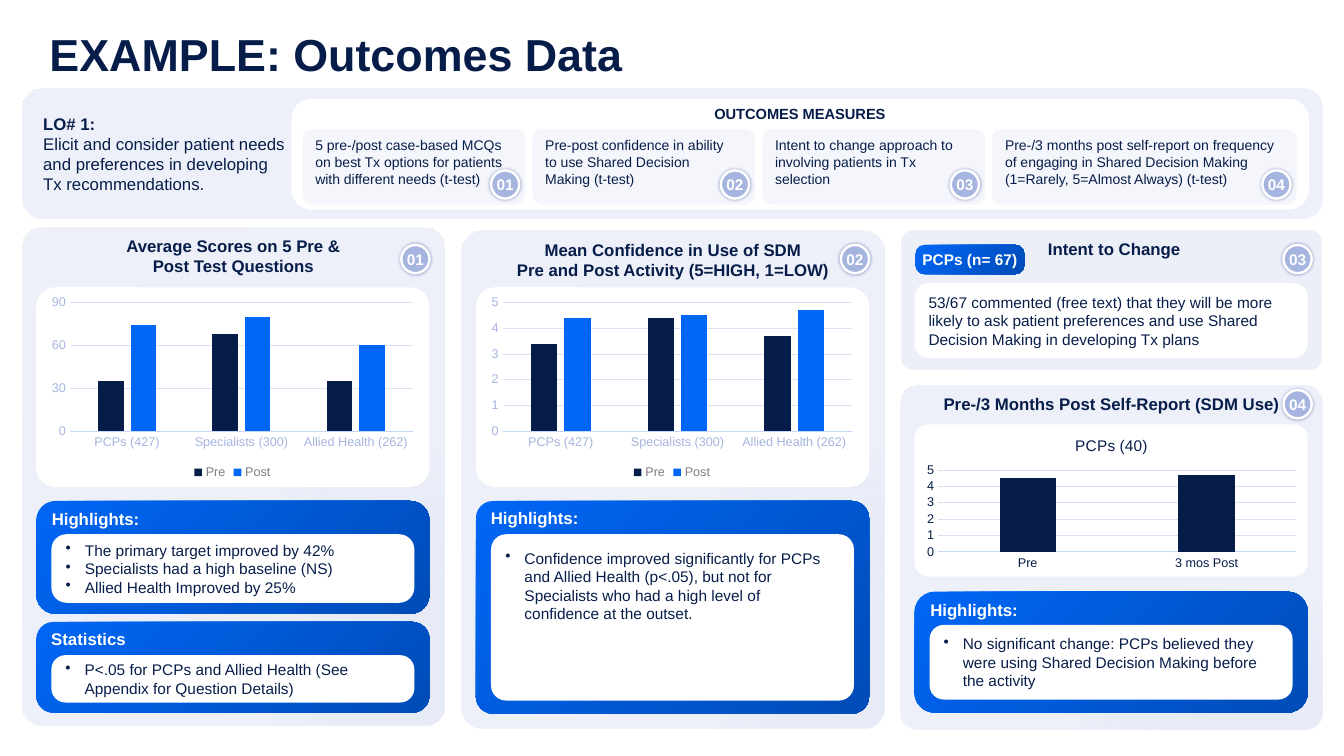
from dataclasses import dataclass

from lxml import etree
from pptx import Presentation
from pptx import util as u
from pptx.chart import data as cd
from pptx.dml import color
from pptx.enum import chart as ch
from pptx.enum import shapes, text
from pptx.oxml import ns, parse_xml


@dataclass(frozen=True)
class Theme:
    font: str = "Arial"
    navy: str = "071D49"
    blue: str = "0066F5"
    deep_blue: str = "004CB8"
    white: str = "FFFFFF"
    mist: str = "EDF0F9"
    grid: str = "DBE1F3"
    axis: str = "C4D6F9"
    lilac: str = "A6B5E0"
    grey: str = "808080"
    shadow: str = "00147B"
    title: float = 32
    heading: float = 12
    body: float = 11
    label: float = 10.5
    small: float = 10
    tick: float = 9


@dataclass(frozen=True)
class Measure:
    x: float
    w: float
    right: float
    words: str


@dataclass(frozen=True)
class Callout:
    x: float
    y: float
    h: float
    r: float
    inner_h: float
    inner_r: float
    heading: str
    points: tuple[str, ...]
    top: bool = False


@dataclass(frozen=True)
class Bars:
    box: tuple[float, float, float, float]
    cats: tuple[str, ...]
    series: tuple[tuple[str, tuple[float, ...]], ...]
    top: float
    step: float
    ink: str
    title: str = ""


T = Theme()
COLS = (0.22, 4.58, 8.93)
INNER = tuple(round(x + 0.14, 2) for x in COLS)
GROUPS = ("PCPs (427)", "Specialists (300)", "Allied Health (262)")
MEASURES = (
    Measure(3, 2.21, 0.2, "5 pre-/post case-based MCQs on best Tx options for patients with different needs (t-test)"),
    Measure(5.28, 2.21, 0.2, "Pre-post confidence in ability to use Shared Decision Making (t-test)"),
    Measure(7.56, 2.21, 0.2, "Intent to change approach to involving patients in Tx selection"),
    Measure(9.84, 3.02, 0.1, "Pre-/3 months post self-report on frequency of engaging in Shared Decision Making "
            "(1=Rarely, 5=Almost Always) (t-test)"),
)
CALLOUTS = (
    Callout(INNER[0], 4.97, 1.12, 0.19, 0.68, 0.15, "Highlights:",
            ("The primary target improved by 42%", "Specialists had a high baseline (NS)",
             "Allied Health Improved by 25%")),
    Callout(INNER[0], 6.17, 0.9, 0.17, 0.47, 0.14, "Statistics",
            ("P<.05 for PCPs and Allied Health (See Appendix for Question Details)",)),
    Callout(INNER[1], 4.97, 2.11, 0.17, 1.65, 0.15, "Highlights:",
            ("Confidence improved significantly for PCPs and Allied Health (p<.05), but not for "
             "Specialists who had a high level of confidence at the outset.",), True),
    Callout(INNER[2], 5.87, 1.2, 0.2, 0.74, 0.14, "Highlights:",
            ("No significant change: PCPs believed they were using Shared Decision Making before the activity",)),
)
CHARTS = (
    Bars((0.44, 2.89, 3.73, 1.91), GROUPS, (("Pre", (35, 68, 35)), ("Post", (74, 80, 60))), 90, 30, T.lilac),
    Bars((4.8, 2.89, 3.73, 1.91), GROUPS, (("Pre", (3.4, 4.4, 3.7)), ("Post", (4.4, 4.5, 4.7))), 5, 1, T.lilac),
    Bars((9.12, 4.21, 3.81, 1.48), ("Pre", "3 mos Post"), (("PCPs (40)", (4.5, 4.7)),), 5, 1, T.navy, "PCPs (40)"),
)


def rgb(c: str) -> color.RGBColor:
    return color.RGBColor.from_string(c)


def put_text(sp, *lines: str, size: float = T.heading, c: str = T.navy, bold: bool = False,
             first_only: bool = False, center: bool = False, middle: bool = False, bullet: bool = False,
             ins: tuple[float, ...] = (0, 0, 0, 0), spacing: float | None = None) -> None:
    tf = sp.text_frame
    tf.word_wrap = True
    tf.vertical_anchor = text.MSO_ANCHOR.MIDDLE if middle else text.MSO_ANCHOR.TOP
    tf.margin_left, tf.margin_top, tf.margin_right, tf.margin_bottom = map(u.Inches, ins)
    for i, line in enumerate(lines):
        p = tf.add_paragraph() if i else tf.paragraphs[0]
        p.alignment = text.PP_ALIGN.CENTER if center else text.PP_ALIGN.LEFT
        if spacing:
            p.line_spacing = spacing
        if bullet:
            pPr = p._p.get_or_add_pPr()
            pPr.set("marL", str(u.Inches(0.19)))
            pPr.set("indent", str(u.Inches(-0.19)))
            etree.SubElement(pPr, ns.qn("a:buChar")).set("char", "•")
        r = p.add_run()
        r.text = line
        r.font.name, r.font.size = T.font, u.Pt(size)
        r.font.bold = bold and not (first_only and i)
        r.font.color.rgb = rgb(c)


def set_gradient(sp, stops: tuple[tuple[int, str, int], ...], direction: str) -> None:
    gs = "".join(f'<a:gs pos="{pos * 1000}"><a:srgbClr val="{c}"><a:alpha val="{a * 1000}"/></a:srgbClr></a:gs>'
                 for pos, c, a in stops)
    sp._element.spPr.insert(2, parse_xml(
        f'<a:gradFill {ns.nsdecls("a")} rotWithShape="1"><a:gsLst>{gs}</a:gsLst>{direction}</a:gradFill>'))


def add_box(s, x: float, y: float, w: float, h: float, r: float, fill: str = T.white, alpha: int = 100):
    sp = s.shapes.add_shape(shapes.MSO_SHAPE.ROUNDED_RECTANGLE, *map(u.Inches, (x, y, w, h)))
    sp.adjustments[0] = r / min(w, h)
    sp.shadow.inherit = False
    sp.line.fill.background()
    if fill == "panel":
        set_gradient(sp, ((24, T.grid, 65), (100, T.mist, 100)),
                     '<a:path path="rect"><a:fillToRect l="100000" t="100000"/></a:path>')
    elif fill == "accent":
        set_gradient(sp, ((0, T.blue, 100), (100, T.deep_blue, 100)), '<a:lin ang="2700000" scaled="0"/>')
    else:
        sp.fill.solid()
        sp.fill.fore_color.rgb = rgb(fill)
        if alpha < 100:
            clr = sp._element.spPr.find(".//" + ns.qn("a:srgbClr"))
            etree.SubElement(clr, ns.qn("a:alpha")).set("val", str(alpha * 1000))
    return sp


def add_badge(s, x: float, y: float, number: int) -> None:
    sp = s.shapes.add_shape(shapes.MSO_SHAPE.OVAL, *map(u.Inches, (x, y, 0.28, 0.28)))
    sp.fill.solid()
    sp.fill.fore_color.rgb = rgb(T.lilac)
    sp.line.color.rgb, sp.line.width = rgb(T.white), u.Pt(1.75)
    sp.shadow.inherit = False
    sp._element.spPr.find(ns.qn("a:effectLst")).append(parse_xml(
        f'<a:outerShdw {ns.nsdecls("a")} blurRad="{u.Pt(2)}" dist="0" dir="0" algn="ctr">'
        f'<a:srgbClr val="{T.shadow}"><a:alpha val="34000"/></a:srgbClr></a:outerShdw>'))
    put_text(sp, f"{number:02d}", size=T.body, c=T.white, bold=True, center=True, middle=True)


def add_callout(s, k: Callout) -> None:
    put_text(add_box(s, k.x, k.y, 3.9, k.h, k.r, "accent"), k.heading,
             c=T.white, bold=True, ins=(0.1, 0.02, 0.1, 0.1))
    put_text(add_box(s, k.x + 0.15, k.y + 0.33, 3.6, k.inner_h, k.inner_r), *k.points, size=T.body,
             bullet=True, middle=not k.top, ins=(0.1, 0.1 if k.top else 0, 0.1, 0))


def set_font(font, size: float, c: str) -> None:
    font.name, font.size, font.bold = T.font, u.Pt(size), False
    font.color.rgb = rgb(c)


def add_bars(s, b: Bars) -> None:
    data = cd.CategoryChartData()
    data.categories = b.cats
    for name, values in b.series:
        data.add_series(name, values)
    chart = s.shapes.add_chart(ch.XL_CHART_TYPE.COLUMN_CLUSTERED, *map(u.Inches, b.box), data).chart
    set_font(chart.font, T.small, T.navy)
    chart.has_title = bool(b.title)
    if b.title:
        chart.chart_title.text_frame.text = b.title
        set_font(chart.chart_title.text_frame.paragraphs[0].runs[0].font, T.body, T.navy)
    chart.has_legend = not b.title
    if chart.has_legend:
        chart.legend.position = ch.XL_LEGEND_POSITION.BOTTOM
        chart.legend.include_in_layout = False
        set_font(chart.legend.font, T.tick, T.grey)
    cat, val = chart.category_axis, chart.value_axis
    for axis in (cat, val):
        axis.major_tick_mark = axis.minor_tick_mark = ch.XL_TICK_MARK.NONE
        set_font(axis.tick_labels.font, T.tick, b.ink)
    val.minimum_scale, val.maximum_scale, val.major_unit = 0, b.top, b.step
    val.format.line.fill.background()
    for line, c in ((cat.format.line, T.axis), (val.major_gridlines.format.line, T.grid)):
        line.color.rgb, line.width = rgb(c), u.Pt(0.75)
    plot = chart.plots[0]
    plot.gap_width, plot.overlap, plot.vary_by_categories = 219, -27, False
    for series, c in zip(plot.series, (T.navy, T.blue)):
        series.format.fill.solid()
        series.format.fill.fore_color.rgb = rgb(c)


def main() -> None:
    prs = Presentation()
    prs.slide_width, prs.slide_height = u.Inches(13.33), u.Inches(7.5)
    s = prs.slides.add_slide(prs.slide_layouts[6])

    title = s.shapes.add_textbox(*map(u.Inches, (0.49, 0.35, 12.49, 0.66)))
    put_text(title, "EXAMPLE: Outcomes Data", size=T.title, bold=True, spacing=0.85)

    put_text(add_box(s, COLS[0], 0.88, 12.9, 1.29, 0.2, "panel"), "LO# 1:",
             "Elicit and consider patient needs and preferences in developing Tx recommendations.",
             bold=True, first_only=True, middle=True, ins=(0.15, 0.1, 10.2, 0.1))
    put_text(add_box(s, 2.89, 0.98, 10.09, 1.1, 0.2), "OUTCOMES MEASURES",
             size=T.label, bold=True, center=True)
    for i, m in enumerate(MEASURES, 1):
        put_text(add_box(s, m.x, 1.28, m.w, 0.75, 0.1, T.mist, 60), m.words,
                 size=T.small, ins=(0.1, 0.05, m.right, 0))
        add_badge(s, m.x + m.w - 0.34, 1.69, i)

    panels = (
        (COLS[0], 2.26, 4.94, 0.2, ("Average Scores on 5 Pre &", "Post Test Questions")),
        (COLS[1], 2.29, 4.94, 0.22, ("Mean Confidence in Use of SDM", "Pre and Post Activity (5=HIGH, 1=LOW)")),
        (COLS[2], 3.83, 3.41, 0.18, ("Pre-/3 Months Post Self-Report (SDM Use)",)),
    )
    for x, y, h, r, lines in panels:
        put_text(add_box(s, x, y, 4.19, h, r, "panel"), *lines, bold=True, center=True, ins=(0.1, 0.02, 0.1, 0))
    for x, y, h, r in ((INNER[0], 2.85, 1.98, 0.19), (INNER[1], 2.85, 1.98, 0.19), (INNER[2], 4.21, 1.51, 0.14)):
        add_box(s, x, y, 3.9, h, r)
    for bars in CHARTS:
        add_bars(s, bars)
    for callout in CALLOUTS:
        add_callout(s, callout)

    put_text(add_box(s, 8.94, 2.29, 4.17, 1.38, 0.13, "panel"), "Intent to Change",
             bold=True, center=True, ins=(0.15, 0.04, 0.1, 0))
    put_text(add_box(s, 9.08, 2.43, 1.08, 0.29, 0.09, "accent"), "PCPs (n= 67)",
             size=T.body, c=T.white, bold=True, center=True, middle=True, ins=(0, 0.1, 0, 0.1))
    put_text(add_box(s, INNER[2], 2.81, 3.9, 0.74, 0.14),
             "53/67 commented (free text) that they will be more likely to ask patient preferences "
             "and use Shared Decision Making in developing Tx plans",
             size=T.body, middle=True, ins=(0.1, 0, 0.1, 0))
    for x, y, number in ((3.98, 2.43, 1), (8.34, 2.43, 2), (12.73, 2.43, 3), (12.73, 3.87, 4)):
        add_badge(s, x, y, number)

    prs.save("out.pptx")


if __name__ == "__main__":
    main()
